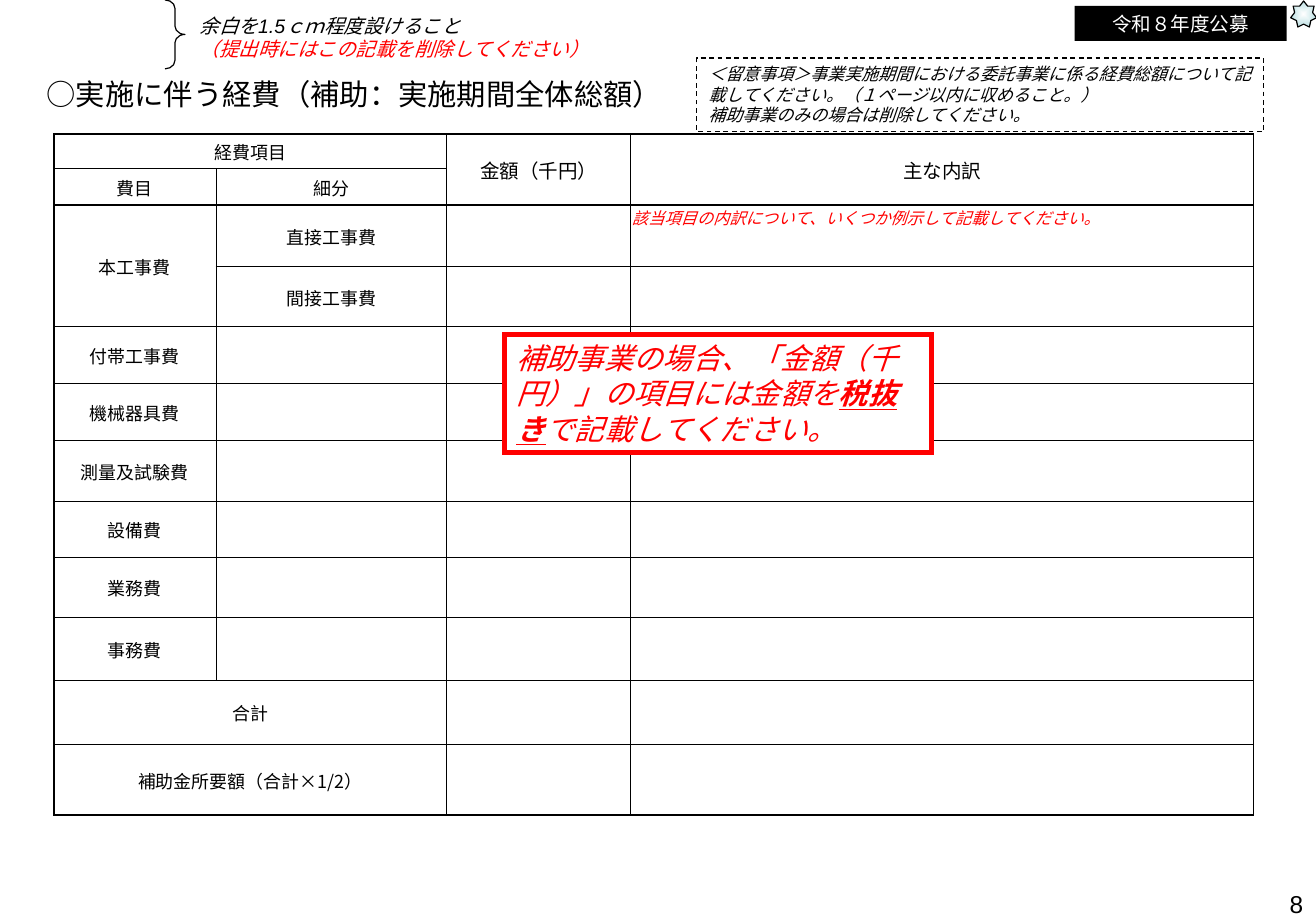
"""Build the subsidy expense table slide."""
from lxml import etree
from pptx import Presentation
from pptx.dml.color import RGBColor
from pptx.enum.dml import MSO_LINE
from pptx.enum.shapes import MSO_SHAPE
from pptx.enum.text import MSO_ANCHOR, PP_ALIGN
from pptx.oxml.ns import qn
from pptx.util import Inches, Pt

LEFT, CENTER, RIGHT = PP_ALIGN.LEFT, PP_ALIGN.CENTER, PP_ALIGN.RIGHT
TOP, MIDDLE = MSO_ANCHOR.TOP, MSO_ANCHOR.MIDDLE
RECT, STAR, BRACE = MSO_SHAPE.RECTANGLE, MSO_SHAPE.STAR_7_POINT, MSO_SHAPE.RIGHT_BRACE
DASH = MSO_LINE.DASH

SLIDE_WIDTH, SLIDE_HEIGHT = 10261600, 7200900
PX = 914400 / 117.3
BLACK, WHITE, RED, PALE = "000000", "FFFFFF", "FF0000", "BBE0E3"
ARIAL, NOTO = "Arial", "Noto Sans CJK JP"

COL_EDGES = [54, 216, 447, 631, 1254]
ROW_EDGES = [134, 169, 205, 267, 327, 384, 441, 502, 558, 618, 681, 745, 816]
HEADER_ROWS = 2
ROWS = [
    ["経費項目", "", "金額（千円）", "主な内訳"],
    ["費目", "細分", "", ""],
    ["本工事費", "直接工事費", "", "該当項目の内訳について、いくつか例示して記載してください。"],
    ["", "間接工事費", "", ""],
    ["付帯工事費", "", "", ""],
    ["機械器具費", "", "", ""],
    ["測量及試験費", "", "", ""],
    ["設備費", "", "", ""],
    ["業務費", "", "", ""],
    ["事務費", "", "", ""],
    ["合計", "", "", ""],
    ["補助金所要額（合計×1/2）", "", "", ""],
]
MERGES = [(0, 0, 0, 1), (0, 2, 1, 2), (0, 3, 1, 3), (2, 0, 3, 0),
          (10, 0, 10, 1), (11, 0, 11, 1)]

TAX_NOTICE = [[
    ("補助事業の場合、「金額（千円）」の項目には金額を", {}),
    ("税抜き", {"bold": True, "underline": True}),
    ("で記載してください。", {}),
]]
CALL_LABEL = [[("令和８年度公募", {})]]
GUIDANCE = [[
    ("＜留意事項＞事業実施期間における委託事業に係る経費総額について記載してください。（１ページ以内に収めること。）", {}),
    ("\n", {}),
    ("補助事業のみの場合は削除してください。", {}),
]]
MARGIN_NOTE = [
    [("余白を1.5ｃｍ程度設けること", {})],
    [("（提出時にはこの記載を削除してください）", {"color": RED})],
]
TITLE = [[("○実施に伴う経費（補助：実施期間全体総額）", {})]]
PAGE_NUMBER = [[("8", {})]]


def px(n):
    return round(n * PX)


def rgb(color):
    return RGBColor.from_string(color)


def style_run(r, size, color=BLACK, font=ARIAL, italic=False, bold=False, underline=False):
    f = r.font
    f.size, f.name, f.italic, f.bold, f.underline = Pt(size), font, italic, bold, underline
    f.color.rgb = rgb(color)
    etree.SubElement(r._r.get_or_add_rPr(), qn("a:ea")).set("typeface", NOTO)


def write(s, paragraphs, align=LEFT, **base):
    tf = s.text_frame
    tf.word_wrap = True
    tf.vertical_anchor = TOP
    for i, pieces in enumerate(paragraphs):
        p = tf.add_paragraph() if i else tf.paragraphs[0]
        p.alignment = align
        for text, extra in pieces:
            if text == "\n":
                p.add_line_break()
                size = str(round(base["size"] * 100))
                etree.SubElement(p._p[-1], qn("a:rPr"), sz=size)
                continue
            r = p.add_run()
            r.text = text
            style_run(r, **{**base, **extra})


def add_shape(slide, kind, box, fill=None, line=None, width=0.75):
    s = slide.shapes.add_shape(kind, *map(px, box))
    s.shadow.inherit = False
    if fill:
        s.fill.solid()
        s.fill.fore_color.rgb = rgb(fill)
    else:
        s.fill.background()
    if line:
        s.line.color.rgb = rgb(line)
        s.line.width = Pt(width)
    else:
        s.line.fill.background()
    return s


def add_text(slide, box, paragraphs, **style):
    write(slide.shapes.add_textbox(*map(px, box)), paragraphs, **style)


def merged_area(row, col):
    for top, left, bottom, right in MERGES:
        if top <= row <= bottom and left <= col <= right:
            return top, left, bottom, right
    return row, col, row, col


def set_borders(cell, row, col):
    top, left, bottom, right = merged_area(row, col)
    origin = (row, col) == (top, left)
    last_row, last_col = len(ROWS) - 1, len(COL_EDGES) - 2
    edges = [
        ("a:lnL", col == left, 1 if left == 0 else 0.5),
        ("a:lnR", col == right, 1 if right == last_col else 0.5),
        ("a:lnT", row == top, {0: 1, HEADER_ROWS: 1.5}.get(top, 0.5)),
        ("a:lnB", row == bottom, {HEADER_ROWS - 1: 1.5, last_row: 1}.get(bottom, 0.5)),
    ]
    tcPr = cell._tc.get_or_add_tcPr()
    visible = [(tag, width) for tag, outer, width in edges if outer or origin]
    for i, (tag, width) in enumerate(visible):
        ln = etree.Element(qn(tag), w=str(Pt(width)))
        fill = etree.SubElement(ln, qn("a:solidFill"))
        etree.SubElement(fill, qn("a:srgbClr"), val=BLACK)
        tcPr.insert(i, ln)


def add_expense_table(slide):
    x, y = COL_EDGES[0], ROW_EDGES[0]
    box = x, y, COL_EDGES[-1] - x, ROW_EDGES[-1] - y
    table = slide.shapes.add_table(len(ROWS), len(COL_EDGES) - 1, *map(px, box)).table
    table.first_row = table.horz_banding = False
    for column, start, end in zip(table.columns, COL_EDGES, COL_EDGES[1:]):
        column.width = px(end - start)
    for line, start, end in zip(table.rows, ROW_EDGES, ROW_EDGES[1:]):
        line.height = px(end - start)
    for top, left, bottom, right in MERGES:
        table.cell(top, left).merge(table.cell(bottom, right))
    for row, texts in enumerate(ROWS):
        for col, text in enumerate(texts):
            cell = table.cell(row, col)
            cell.margin_left = cell.margin_right = cell.margin_top = Inches(0.01)
            cell.margin_bottom = 0
            cell.fill.background()
            set_borders(cell, row, col)
            if not text:
                continue
            example = row >= HEADER_ROWS and col == 3
            cell.vertical_anchor = TOP if example else MIDDLE
            p = cell.text_frame.paragraphs[0]
            p.text = text
            p.alignment = LEFT if example else CENTER
            size = 10 if example else 12 if col > 1 else 11
            style_run(p.runs[0], size, RED if example else BLACK, NOTO, italic=example)


def add_star(slide):
    s = add_shape(slide, STAR, (1291, 1, 26, 26), line=BLACK)
    s.fill.gradient()
    for stop, color in zip(s.fill.gradient_stops, (WHITE, PALE)):
        stop.color.rgb = rgb(color)
    grad = s._element.spPr.find(qn("a:gradFill"))
    grad.remove(grad.find(qn("a:lin")))
    center = etree.SubElement(grad, qn("a:path"), {"path": "rect"})
    etree.SubElement(center, qn("a:fillToRect"), dict.fromkeys("ltrb", "50000"))


def main():
    prs = Presentation()
    prs.slide_width, prs.slide_height = SLIDE_WIDTH, SLIDE_HEIGHT
    slide = prs.slides.add_slide(prs.slide_layouts[6])
    add_expense_table(slide)
    notice = add_shape(slide, RECT, (505, 335, 427, 118), WHITE, RED, 3)
    etree.SubElement(notice.line._get_or_add_ln(), qn("a:miter"), lim="800000")
    write(notice, TAX_NOTICE, size=18, color=RED, font=NOTO, italic=True)
    add_star(slide)
    label = add_shape(slide, RECT, (1075, 6, 212, 35), BLACK)
    write(label, CALL_LABEL, CENTER, size=12, color=WHITE)
    guidance = add_shape(slide, RECT, (697, 58, 567, 74), line=BLACK)
    guidance.line.dash_style = DASH
    write(guidance, GUIDANCE, size=10.5, italic=True)
    add_text(slide, (995, 884, 320, 39), PAGE_NUMBER, align=RIGHT, size=15)
    brace = add_shape(slide, BRACE, (165, 0, 20, 69), line=BLACK)
    brace.adjustments[0] = 0.42
    add_text(slide, (188, 8, 632, 59), MARGIN_NOTE, size=12, italic=True)
    add_text(slide, (35, 71, 713, 47), TITLE, size=18)
    prs.save("out.pptx")


if __name__ == "__main__":
    main()
